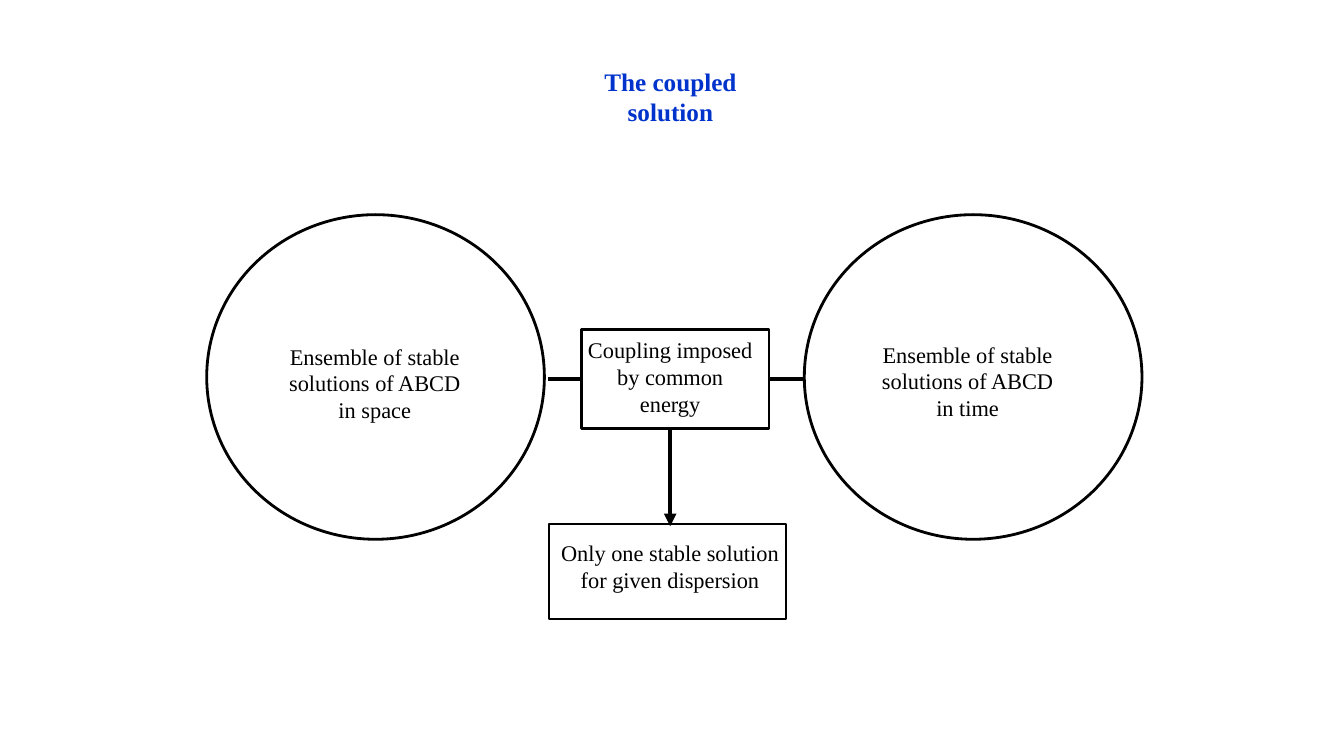
from lxml import etree
from pptx import Presentation
from pptx.dml.color import RGBColor
from pptx.enum import shapes, text
from pptx.oxml import ns
from pptx.util import Cm, Pt

BLACK = RGBColor(0x00, 0x00, 0x00)
BLUE = RGBColor(0x00, 0x33, 0xCC)
FONT = "Times New Roman"


def style_paragraph(para, size, color, bold=False):
    para.alignment = text.PP_ALIGN.CENTER
    para.font.name = FONT
    para.font.size = Pt(size)
    para.font.bold = bold
    para.font.color.rgb = color


def add_outline(page, kind, box, width):
    """Draw an unfilled shape; box is left, top, width, height in cm."""
    shape = page.shapes.add_shape(kind, *map(Cm, box))
    shape.shadow.inherit = False
    shape.fill.background()
    shape.line.color.rgb = BLACK
    shape.line.width = Pt(width)
    return shape


def add_label(page, wording, box):
    frame = page.shapes.add_textbox(*map(Cm, box)).text_frame
    frame.word_wrap = True
    frame.text = wording
    style_paragraph(frame.paragraphs[0], 16, BLACK)


def add_link(page, start, end, width, arrow=False):
    link = page.shapes.add_connector(
        shapes.MSO_CONNECTOR.STRAIGHT, *map(Cm, start + end))
    link.line.color.rgb = BLACK
    link.line.width = Pt(width)
    if arrow:
        etree.SubElement(link.line._get_or_add_ln(), ns.qn("a:tailEnd"), type="triangle")
    etree.SubElement(link._element.spPr, ns.qn("a:effectLst"))
    return link


def add_title(page, wording, box):
    title = page.shapes.title
    title.left, title.top, title.width, title.height = map(Cm, box)
    frame = title.text_frame
    frame.text = wording
    frame.word_wrap = False
    frame.vertical_anchor = text.MSO_ANCHOR.TOP
    style_paragraph(frame.paragraphs[0], 18, BLUE, bold=True)


def add_ensemble(page, wording, box, inset):
    """Draw a circle with its label inset (across, down) from its corner."""
    left, top, _, _ = box
    add_outline(page, shapes.MSO_SHAPE.OVAL, box, 2)
    add_label(page, wording, (left + inset[0], top + inset[1], 5.33, 2.97))


def add_coupling(page, box):
    """Draw the coupling box and its links to the circles on both sides."""
    left, top, width, height = box
    reach = 0.85
    middle = top + height / 2
    add_label(page, "Coupling imposed by common energy",
              (left - 0.16, top + 0.05, width + 0.06, height - 0.2))
    frame = add_outline(page, shapes.MSO_SHAPE.RECTANGLE, box, 1.75)
    for edge, outward, side in ((left, -1, 1), (left + width, 1, 3)):
        link = add_link(page, (edge, middle), (edge + outward * reach, middle), 2.25)
        link.begin_connect(frame, side)


def add_result(page, box, arrow_length):
    """Draw the result box and the arrow coming down to it."""
    left, top, width, height = box
    arrow_x = left + 3.05
    add_link(page, (arrow_x, top - arrow_length), (arrow_x, top + 0.05), 3, arrow=True)
    add_label(page, "Only one stable solution for given dispersion",
              (left - 0.23, top + 0.25, width + 0.58, 1.63))
    add_outline(page, shapes.MSO_SHAPE.RECTANGLE, box, 1.5)


def main():
    deck = Presentation()
    deck.slide_width, deck.slide_height = Cm(33.87), Cm(19.05)
    page = deck.slides.add_slide(deck.slide_layouts[5])
    add_title(page, "The coupled solution", (13.82, 1.55, 6.15, 1.02))
    add_ensemble(page, "Ensemble of stable solutions of ABCD in space",
                 (5.21, 5.41, 8.51, 8.18), (1.57, 3.1))
    add_ensemble(page, "Ensemble of stable solutions of ABCD in time",
                 (20.27, 5.41, 8.51, 8.18), (1.45, 3.05))
    add_coupling(page, (14.66, 8.3, 4.72, 2.5))
    add_result(page, (13.84, 13.21, 5.97, 2.39), 2.41)
    deck.save("out.pptx")


if __name__ == "__main__":
    main()
